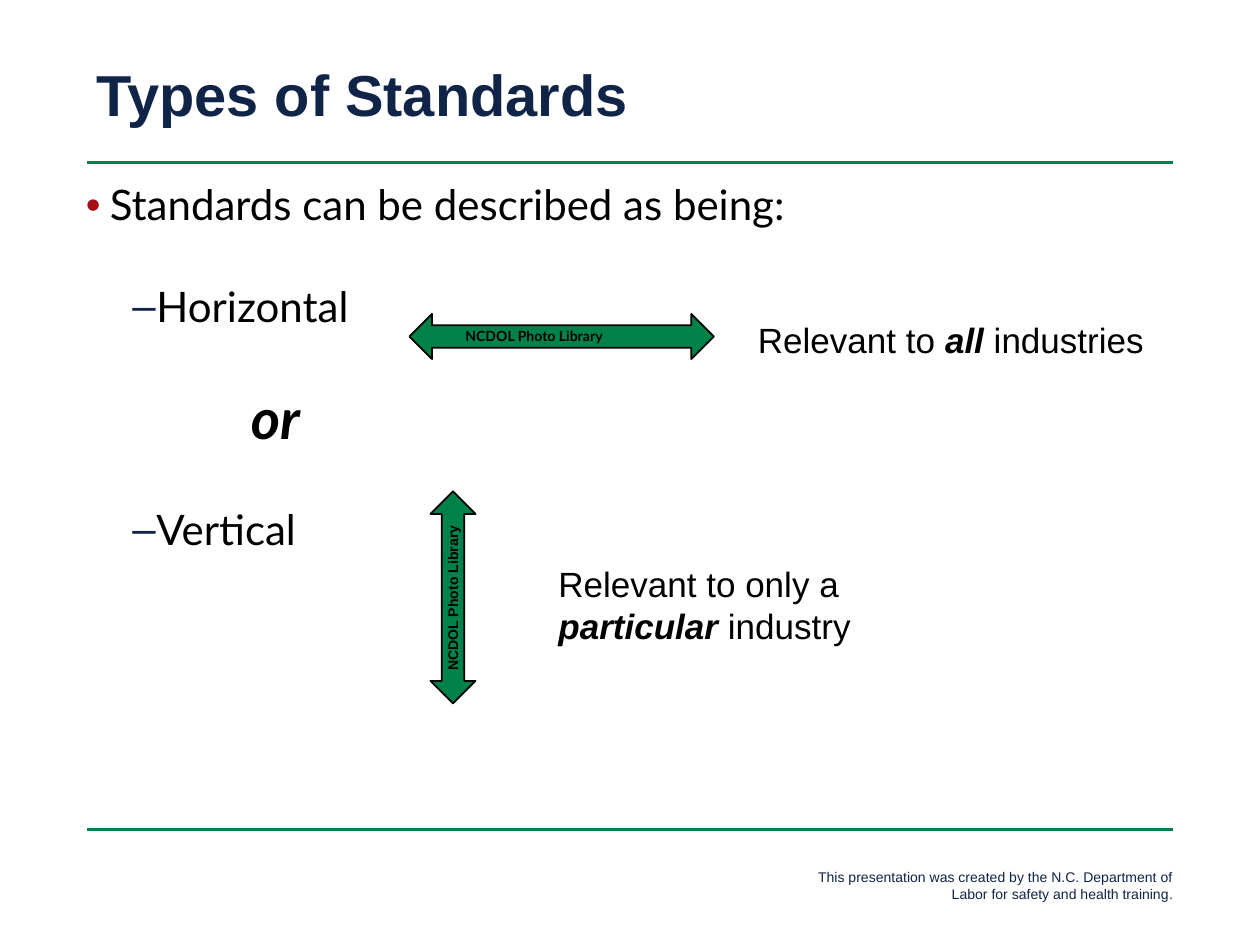
from pptx import Presentation
from pptx import util as u
from pptx.dml.color import RGBColor
from pptx.enum import shapes, text
from pptx.oxml.ns import qn
from lxml import etree

COLORS = {"navy": "102447", "green": "00814A", "red": "A70D15",
          "black": "000000", "violet": "2B0E62"}
COLUMNS, ROWS = 120, 90
UNIT = u.Inches(10) // COLUMNS

FORMATS = {
    "title": {"size": u.Pt(33), "name": "Arial", "bold": True},
    "body": {"size": u.Pt(24), "name": "Lato"},
    "or": {"size": u.Pt(32), "name": "Lato", "bold": True, "italic": True},
    "meaning": {"size": u.Pt(20), "name": "Arial"},
    "stress": {"size": u.Pt(20), "name": "Arial", "bold": True, "italic": True},
    "footer": {"size": u.Pt(8), "name": "Arial"},
    "credit": {"size": u.Pt(8), "name": "Lato", "bold": True},
    "upright credit": {"size": u.Pt(8), "name": "Arial", "bold": True},
}


def color(name):
    return RGBColor.from_string(COLORS[name])


def grid(*cells):
    return [round(cell * UNIT) for cell in cells]


def set_values(target, values):
    for name, value in values.items():
        setattr(target, name, value)


def write(paragraph, wording, style, ink="black"):
    run = paragraph.add_run()
    run.text = wording
    set_values(run.font, FORMATS[style])
    run.font.color.rgb = color(ink)


def text_frame(slide, box, wrap=True):
    frame = slide.shapes.add_textbox(*grid(*box)).text_frame
    frame.word_wrap = wrap
    return frame


def rule(slide, left, row, width):
    line = slide.shapes.add_connector(
        shapes.MSO_CONNECTOR.STRAIGHT, *grid(left, row, left + width, row))
    line.line.color.rgb = color("green")
    line.line.width = u.Pt(2)
    etree.SubElement(line._element.spPr, qn("a:effectLst"))


def header(slide, box):
    left, top, width, height = box
    frame = text_frame(slide, (left, top, width, height))
    frame.vertical_anchor = text.MSO_ANCHOR.MIDDLE
    title = frame.paragraphs[0]
    title.line_spacing = 0.9
    write(title, "Types of Standards", "title", "navy")


def set_bullet(paragraph, margin, hanging, sign, ink):
    properties = paragraph._p.get_or_add_pPr()
    properties.set("marL", str(u.Inches(margin)))
    properties.set("indent", str(-u.Inches(hanging)))
    if not sign:
        etree.SubElement(properties, qn("a:buNone"))
        return
    bullet_color = etree.SubElement(properties, qn("a:buClr"))
    etree.SubElement(bullet_color, qn("a:srgbClr"), val=COLORS[ink])
    etree.SubElement(properties, qn("a:buFont"), typeface="Arial")
    etree.SubElement(properties, qn("a:buChar"), char=sign)


def outline(slide, box):
    points = [
        ("Standards can be described as being:", "body", 0, 0.19, 0.19, "•", "red"),
        ("Horizontal", "body", 32, 0.56, 0.19, "–", "navy"),
        ("or", "or", 34, 1.31, 0, None, None),
        ("Vertical", "body", 33, 0.56, 0.19, "–", "navy"),
    ]
    frame = text_frame(slide, box)
    for index, (wording, style, gap, *bullet) in enumerate(points):
        point = frame.add_paragraph() if index else frame.paragraphs[0]
        set_bullet(point, *bullet)
        point.line_spacing = 0.9
        if gap:
            point.space_before = u.Pt(gap)
        write(point, wording, style)


def meaning(slide, box, parts):
    paragraph = text_frame(slide, box).paragraphs[0]
    for wording, style in parts:
        write(paragraph, wording, style)


def direction(slide, box, outline_kind, style, shift=0, turn=0):
    left, top, width, height = box
    arrow = slide.shapes.add_shape(outline_kind, *grid(*box))
    arrow.shadow.inherit = False
    arrow.fill.solid()
    arrow.fill.fore_color.rgb = color("green")
    arrow.line.color.rgb = color("black")
    arrow.line.width = u.Pt(1)
    credit_width, credit_height = 16.3, 2.9
    credit_left = left + (width - credit_width) / 2 + shift
    credit_top = top + (height - credit_height) / 2
    credit = slide.shapes.add_textbox(
        *grid(credit_left, credit_top, credit_width, credit_height))
    credit.rotation = turn
    credit.text_frame.word_wrap = False
    write(credit.text_frame.paragraphs[0], "NCDOL Photo Library", style)


def footer(slide, box):
    notice = text_frame(slide, box).paragraphs[0]
    notice.alignment = text.PP_ALIGN.RIGHT
    write(notice, "This presentation was created by the N.C. Department of "
          "Labor for safety and health training", "footer", "navy")
    write(notice, ".", "footer", "violet")


def main():
    deck = Presentation()
    deck.slide_width, deck.slide_height = grid(COLUMNS, ROWS)
    slide = deck.slides.add_slide(deck.slide_layouts[6])
    for row in (15.5, 79):
        rule(slide, 8.3, row, 103.4)
    footer(slide, (73.9, 82.1, 39, 4.4))
    header(slide, (8, 5.75, 108, 7.2))
    outline(slide, (7, 17, 107, 51.4))
    meaning(slide, (52, 53, 33, 9.2), [
        ("Relevant to only a ", "meaning"), ("particular", "stress"),
        (" industry", "meaning")])
    meaning(slide, (71, 29.75, 40, 5.3), [
        ("Relevant to ", "meaning"), ("all", "stress"),
        (" industries", "meaning")])
    direction(slide, (39, 29.9, 29, 4.3),
              shapes.MSO_SHAPE.LEFT_RIGHT_ARROW, "credit", shift=-2.2)
    direction(slide, (41, 46.8, 4.3, 20.2),
              shapes.MSO_SHAPE.UP_DOWN_ARROW, "upright credit", turn=270)
    deck.save("out.pptx")


if __name__ == "__main__":
    main()
